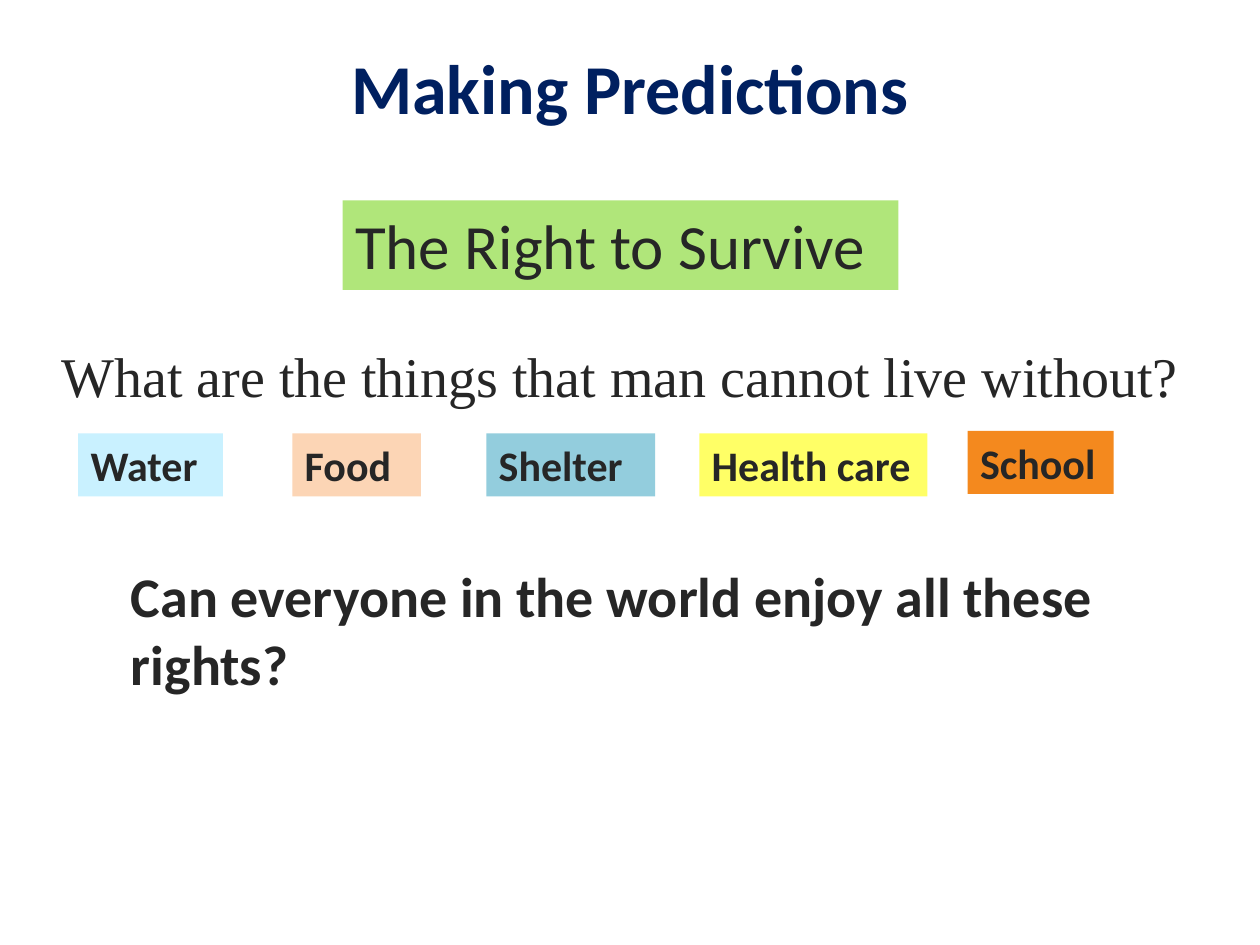
import pptx
import pptx.dml.color
import pptx.enum.text
import pptx.util

Inches = pptx.util.Inches

COLORS = {
    "navy": "002060",
    "ink": "262626",
    "green": "B0E67A",
    "water": "C9F1FF",
    "food": "FCD5B5",
    "shelter": "93CDDD",
    "health": "FFFF66",
    "school": "F4891E",
}


class SlideBuilder:
    sans = "Calibri"
    serif = "Times New Roman"

    def __init__(self, slide):
        self.slide = slide

    def color(self, name):
        return pptx.dml.color.RGBColor.from_string(COLORS[name])

    def text(self, words, left, top, width, height, size, bold=False, font=None, color="ink"):
        box = self.slide.shapes.add_textbox(
            Inches(left), Inches(top), Inches(width), Inches(height)
        )
        frame = box.text_frame
        frame.text = words
        frame.word_wrap = True
        style = frame.paragraphs[0].runs[0].font
        style.name = font or self.sans
        style.size = pptx.util.Pt(size)
        style.bold = bold
        style.color.rgb = self.color(color)
        return box

    def title(self, words, left, top, width, height):
        frame = self.text(words, left, top, width, height, 40, True, color="navy").text_frame
        frame.vertical_anchor = pptx.enum.text.MSO_ANCHOR.MIDDLE
        frame.paragraphs[0].alignment = pptx.enum.text.PP_ALIGN.CENTER

    def label(self, words, left, top, width, height, size, fill, bold=False):
        box = self.text(words, left, top, width, height, size, bold)
        box.fill.solid()
        box.fill.fore_color.rgb = self.color(fill)


def main():
    deck = pptx.Presentation()
    deck.slide_width, deck.slide_height = Inches(10), Inches(7.5)
    builder = SlideBuilder(deck.slides.add_slide(deck.slide_layouts[6]))

    builder.title("Making Predictions", 0.5, 0.3, 9, 0.77)
    builder.label("The Right to Survive", 2.72, 1.59, 4.41, 0.71, 36, "green")
    builder.text(
        "What are the things that man cannot live without?",
        0.39, 2.66, 9.3, 0.64, 32, font=builder.serif,
    )

    needs = [
        ("Water", 0.62, 3.44, 1.15, "water"),
        ("Food", 2.32, 3.44, 1.02, "food"),
        ("Shelter", 3.86, 3.44, 1.34, "shelter"),
        ("Health care", 5.55, 3.44, 1.81, "health"),
        ("School", 7.68, 3.42, 1.16, "school"),
    ]
    for need, left, top, width, fill in needs:
        builder.label(need, left, top, width, 0.5, 24, fill, bold=True)

    builder.text(
        "Can everyone in the world enjoy all these rights?",
        0.94, 4.41, 8.59, 1.18, 32, bold=True,
    )
    deck.save("out.pptx")


if __name__ == "__main__":
    main()
